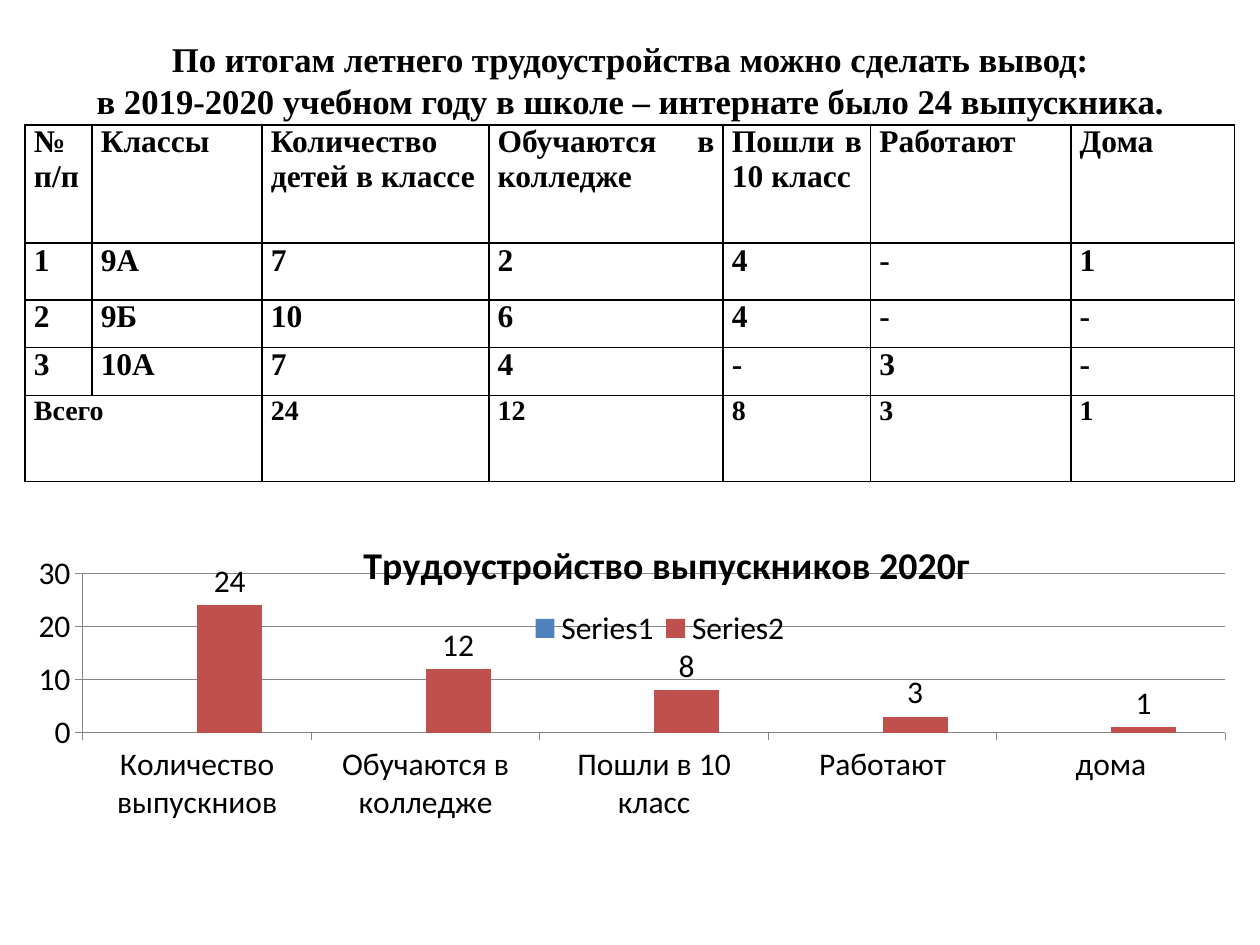
from typing import NamedTuple

from lxml.etree import SubElement
from pptx import Presentation
from pptx.chart.data import CategoryChartData
from pptx.dml.color import RGBColor
from pptx.enum.chart import XL_CHART_TYPE as ChartType
from pptx.enum.chart import XL_LABEL_POSITION as LabelPos
from pptx.enum.chart import XL_LEGEND_POSITION as LegendPos
from pptx.enum.chart import XL_TICK_MARK as Tick
from pptx.enum.text import MSO_ANCHOR as Anchor
from pptx.enum.text import PP_ALIGN as Align
from pptx.oxml.ns import qn
from pptx.util import Inches, Pt

BLACK = RGBColor(0x00, 0x00, 0x00)
GRAY = RGBColor(0x86, 0x86, 0x86)
BLUE = RGBColor(0x4F, 0x81, 0xBD)
RED = RGBColor(0xC0, 0x50, 0x4D)
SERIF, SANS = "Times New Roman", "Calibri"


class Row(NamedTuple):
    height: float
    size: float
    cells: tuple


COLUMNS = (0.53, 1.35, 1.8, 1.86, 1.17, 1.59, 1.3)
ROWS = (
    Row(0.94, 18, ("№\nп/п", "Классы", "Количество детей в классе",
                   "Обучаются в колледже", "Пошли в 10 класс", "Работают", "Дома")),
    Row(0.45, 18, ("1", "9А", "7", "2", "4", "-", "1")),
    Row(0.38, 18, ("2", "9Б", "10", "6", "4", "-", "-")),
    Row(0.38, 18, ("3", "10А", "7", "4", "-", "3", "-")),
    Row(0.68, 16, ("Всего", "", "24", "12", "8", "3", "1")),
)
OUTCOMES = {"Количество выпускниов": 24, "Обучаются в колледже": 12,
            "Пошли в 10 класс": 8, "Работают": 3, "дома": 1}


def style_font(font, size: float, name: str, bold: bool = False) -> None:
    font.size, font.name, font.bold = Pt(size), name, bold
    font.color.rgb = BLACK


def add_borders(cell) -> None:
    pr = cell._tc.get_or_add_tcPr()
    for i, side in enumerate(("lnL", "lnR", "lnT", "lnB")):
        ln = pr.makeelement(qn(f"a:{side}"), {"w": str(Pt(1))})
        fill = SubElement(ln, qn("a:solidFill"))
        SubElement(fill, qn("a:srgbClr"), val=str(BLACK))
        pr.insert(i, ln)


def fill_cell(cell, text: str, size: float) -> None:
    cell.margin_left = cell.margin_right = Inches(0.07)
    cell.margin_top = cell.margin_bottom = 0
    cell.fill.background()
    cell.text = text
    for p in cell.text_frame.paragraphs:
        p.alignment = Align.JUSTIFY
        style_font(p.font, size, SERIF, bold=True)
    add_borders(cell)


def add_results_table(slide) -> None:
    table = slide.shapes.add_table(
        len(ROWS), len(COLUMNS), Inches(0.2), Inches(0.99),
        Inches(sum(COLUMNS)), Inches(sum(row.height for row in ROWS))).table
    for column, width in zip(table.columns, COLUMNS):
        column.width = Inches(width)
    for r, row in enumerate(ROWS):
        table.rows[r].height = Inches(row.height)
        for c, text in enumerate(row.cells):
            fill_cell(table.cell(r, c), text, row.size)
    last = len(ROWS) - 1
    table.cell(last, 0).merge(table.cell(last, 1))


def set_layout(element, inner: bool = False, **fractions: float) -> None:
    """Place a chart part by fractions of the chart's size."""
    for old in element.findall(qn("c:layout")):
        element.remove(old)
    layout = element.makeelement(qn("c:layout"), {})
    manual = SubElement(layout, qn("c:manualLayout"))
    if inner:
        SubElement(manual, qn("c:layoutTarget"), val="inner")
    for axis in ("x", "y"):
        SubElement(manual, qn(f"c:{axis}Mode"), val="edge")
    for key, value in fractions.items():
        SubElement(manual, qn(f"c:{key}"), val=str(value))
    overlay = element.find(qn("c:overlay"))
    element.insert(0 if overlay is None else element.index(overlay), layout)


def add_outcomes_chart(slide) -> None:
    data = CategoryChartData()
    data.categories = list(OUTCOMES)
    data.add_series("Series1", [None] * len(OUTCOMES))
    data.add_series("Series2", list(OUTCOMES.values()))
    chart = slide.shapes.add_chart(
        ChartType.COLUMN_CLUSTERED, Inches(0.28), Inches(3.99),
        Inches(9.45), Inches(2.81), data).chart
    style_font(chart.font, 18, SANS)

    # Title and legend
    chart.has_title = True
    title = chart.chart_title
    title.text_frame.text = "Трудоустройство выпускников 2020г"
    style_font(title.text_frame.paragraphs[0].font, 21.6, SANS, bold=True)
    title.include_in_layout = False
    set_layout(title._element, x=0.27, y=0.08)
    chart.has_legend = True
    chart.legend.position = LegendPos.TOP
    chart.legend.include_in_layout = False
    set_layout(chart.legend._element, x=0.41, y=0.29, w=0.23, h=0.13)

    # Columns
    plot = chart.plots[0]
    plot.gap_width, plot.overlap, plot.vary_by_categories = 150, 0, False
    for series, color in zip(plot.series, (BLUE, RED)):
        series.format.fill.solid()
        series.format.fill.fore_color.rgb = color
        labels = series.data_labels
        labels.show_value = True
        labels.position = LabelPos.OUTSIDE_END
    set_layout(chart._chartSpace.chart.plotArea, inner=True,
               x=0.04, y=0.2, w=0.96, h=0.45)

    # Axes
    values = chart.value_axis
    values.minimum_scale, values.maximum_scale, values.major_unit = 0, 30, 10
    values.has_major_gridlines = True
    values.major_gridlines.format.line.color.rgb = GRAY
    for axis in (values, chart.category_axis):
        axis.major_tick_mark = Tick.OUTSIDE
        axis.format.line.color.rgb = GRAY


def add_title(slide) -> None:
    s = slide.shapes.title
    s.left, s.top, s.width, s.height = map(Inches, (0.5, 0.3, 9, 1.25))
    tf = s.text_frame
    tf.word_wrap, tf.vertical_anchor, tf.margin_top = True, Anchor.TOP, 0
    tf.text = ("По итогам летнего трудоустройства можно сделать вывод:\v"
               "в 2019-2020 учебном году в школе – интернате было 24 выпускника.")
    p = tf.paragraphs[0]
    p.alignment = Align.CENTER
    style_font(p.font, 19.8, SERIF, bold=True)


def main() -> None:
    prs = Presentation()
    prs.slide_width, prs.slide_height = Inches(10), Inches(7.5)
    slide = prs.slides.add_slide(prs.slide_layouts[5])  # title only
    add_title(slide)
    add_results_table(slide)
    add_outcomes_chart(slide)
    prs.save("out.pptx")


if __name__ == "__main__":
    main()
